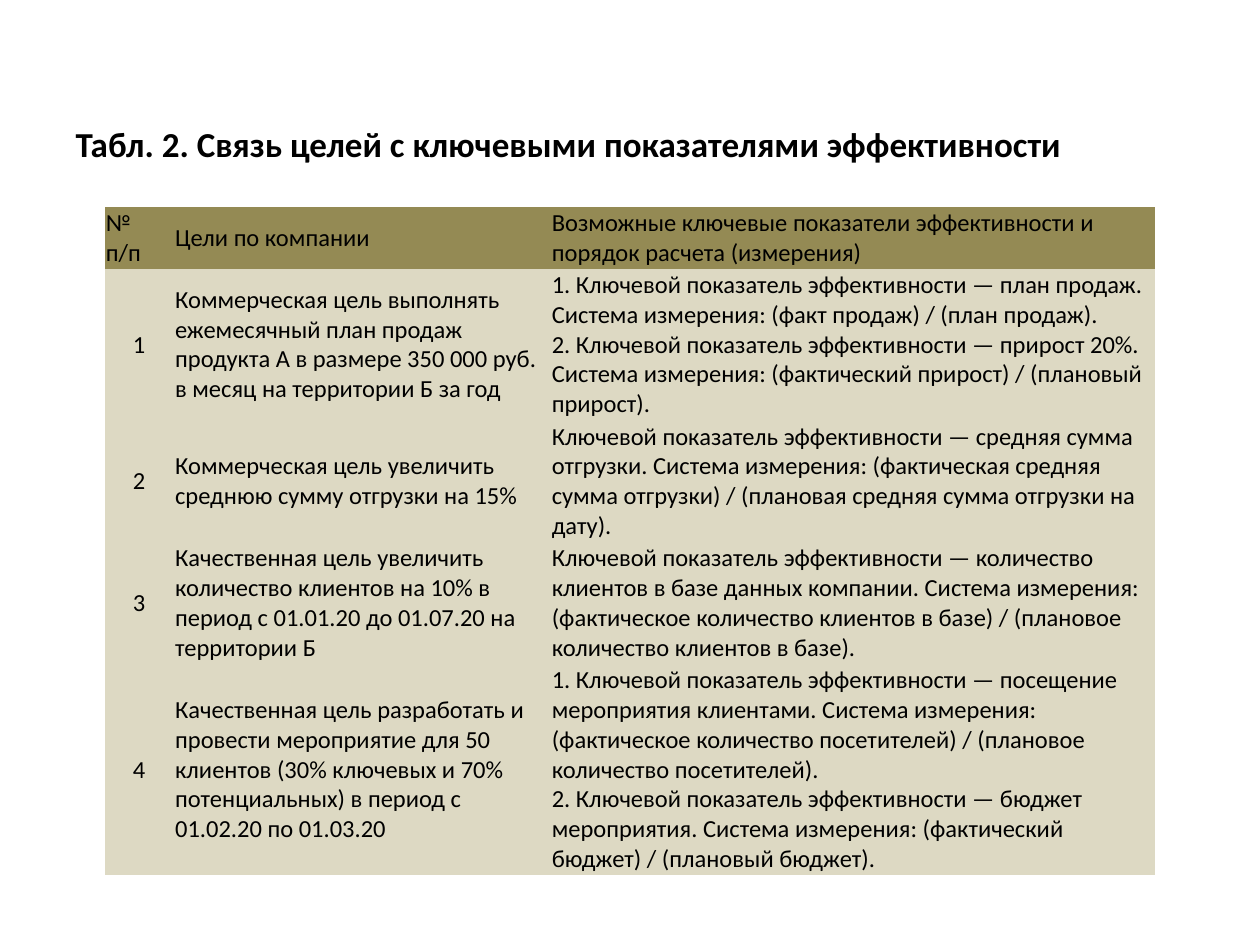
from pptx import Presentation
from pptx.dml.color import RGBColor
from pptx.enum import text
from pptx.oxml.ns import qn
from pptx.util import Inches, Pt
from lxml import etree

BLACK = RGBColor(0x00, 0x00, 0x00)
OLIVE = RGBColor(0x94, 0x8A, 0x54)
SAND = RGBColor(0xDD, 0xD9, 0xC3)
FONT = "Calibri"
PLAIN = "{2D5ABB26-0587-4C30-8999-92F81FD0307C}"  # no style, no grid

COLS = [0.55, 2.99, 4.8]
ROWS = [0.41, 1.18, 0.8, 0.93, 1.63]
HEAD = ["№\nп/п", "Цели по компании",
        "Возможные ключевые показатели эффективности и порядок расчета (измерения)"]
GOALS = [
    ("Коммерческая цель выполнять ежемесячный план продаж продукта А "
     "в размере 350 000 руб. в месяц на территории Б за год",
     "1. Ключевой показатель эффективности — план продаж. "
     "Система измерения: (факт продаж) / (план продаж).\n"
     "2. Ключевой показатель эффективности — прирост 20%. "
     "Система измерения: (фактический прирост) / (плановый прирост)."),
    ("Коммерческая цель увеличить среднюю сумму отгрузки на 15%",
     "Ключевой показатель эффективности — средняя сумма отгрузки. "
     "Система измерения: (фактическая средняя сумма отгрузки) / "
     "(плановая средняя сумма отгрузки на дату)."),
    ("Качественная цель увеличить количество клиентов на 10% "
     "в период с 01.01.20 до 01.07.20 на территории Б",
     "Ключевой показатель эффективности — количество клиентов в базе данных компании. "
     "Система измерения: (фактическое количество клиентов в базе) / "
     "(плановое количество клиентов в базе)."),
    ("Качественная цель разработать и провести мероприятие для 50 клиентов "
     "(30% ключевых и 70% потенциальных) в период с 01.02.20 по 01.03.20",
     "1. Ключевой показатель эффективности — посещение мероприятия клиентами. "
     "Система измерения: (фактическое количество посетителей) / "
     "(плановое количество посетителей).\n"
     "2. Ключевой показатель эффективности — бюджет мероприятия. "
     "Система измерения: (фактический бюджет) / (плановый бюджет)."),
]


def add_text(para, words, size, bold=False):
    """Add one run per line, with line breaks between."""
    for i, line in enumerate(words.split("\n")):
        if i:
            para.add_line_break()
        run = para.add_run()
        run.text = line
        font = run.font
        font.name, font.size, font.bold = FONT, Pt(size), bold
        font.color.rgb = BLACK


def add_head(slide, left, top, width, height):
    """Table caption in the body placeholder."""
    body = slide.placeholders[1]
    body.left, body.top, body.width, body.height = left, top, width, height
    para = body.text_frame.paragraphs[0]
    para.space_before = Pt(4)
    # No bullet, no hanging indent
    props = para._p.get_or_add_pPr()
    props.set("marL", "0")
    props.set("indent", "0")
    etree.SubElement(props, qn("a:buNone"))
    add_text(para, "Табл. 2. Связь целей с ключевыми показателями эффективности", 20, True)


def fill_cell(cell, words, color, align):
    cell.fill.solid()
    cell.fill.fore_color.rgb = color
    cell.vertical_anchor = text.MSO_ANCHOR.MIDDLE
    cell.margin_left = cell.margin_right = Inches(0.01)
    cell.margin_top = cell.margin_bottom = Inches(0.01)
    para = cell.text_frame.paragraphs[0]
    para.alignment = align
    add_text(para, words, 14)


def add_goals(slide, left, top, width, height):
    """Table of goals and their indicators."""
    data = [HEAD] + [(str(n), *goal) for n, goal in enumerate(GOALS, 1)]
    table = slide.shapes.add_table(len(ROWS), len(COLS), left, top, width, height).table
    table.first_row = table.horz_banding = False
    table._tbl.tblPr.find(qn("a:tableStyleId")).text = PLAIN
    for col, size in zip(table.columns, COLS):
        col.width = Inches(size)
    for row, size in zip(table.rows, ROWS):
        row.height = Inches(size)
    for r, line in enumerate(data):
        for c, words in enumerate(line):
            mid = r > 0 and c == 0
            align = text.PP_ALIGN.CENTER if mid else text.PP_ALIGN.LEFT
            fill_cell(table.cell(r, c), words, SAND if r else OLIVE, align)


def main():
    deck = Presentation()
    deck.slide_width, deck.slide_height = Inches(10), Inches(7.5)
    slide = deck.slides.add_slide(deck.slide_layouts[1])
    # The caption sits in the body, so the title goes
    title = slide.shapes.title._element
    title.getparent().remove(title)
    add_head(slide, Inches(0.5), Inches(0.92), Inches(9), Inches(5.78))
    add_goals(slide, Inches(0.83), Inches(1.64), Inches(sum(COLS)), Inches(sum(ROWS)))
    deck.save("out.pptx")


if __name__ == "__main__":
    main()
